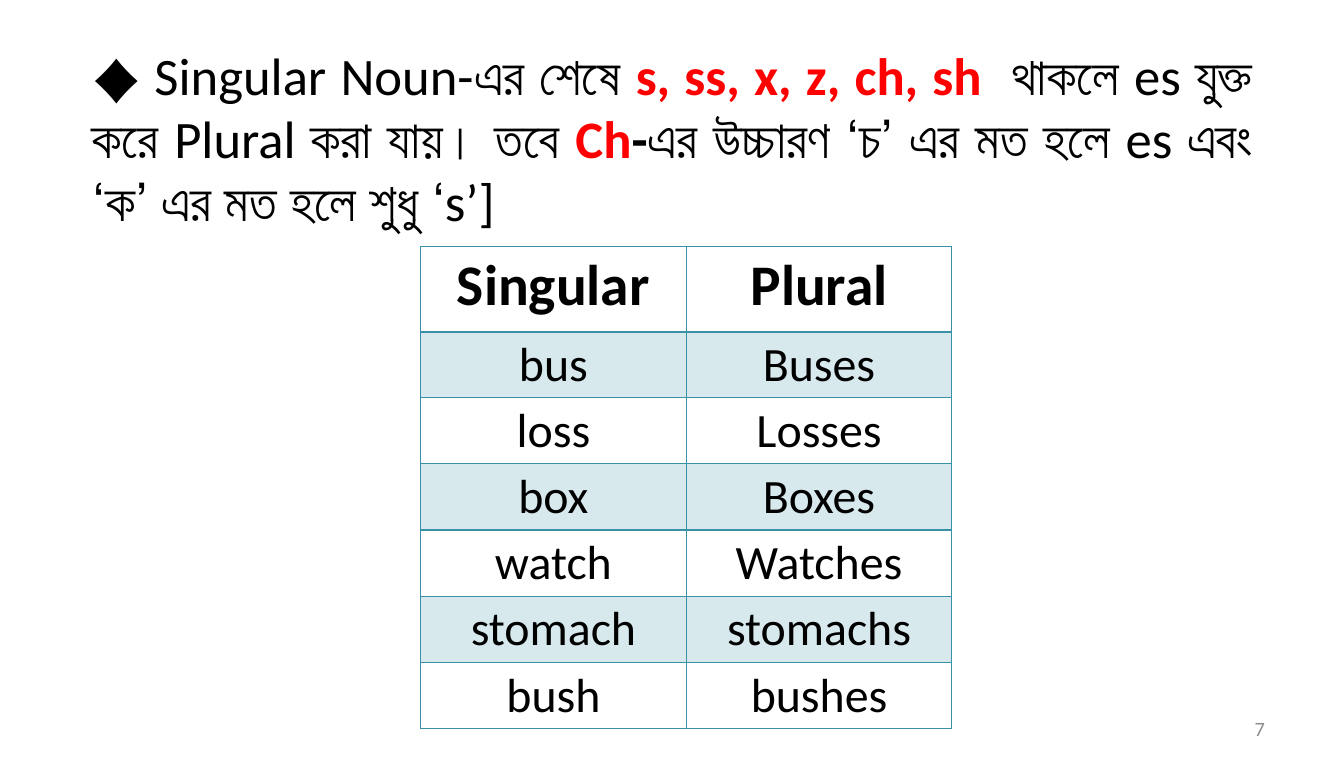
import pptx
import pptx.dml.color
import pptx.enum.text
import pptx.oxml
import pptx.oxml.ns
import pptx.util
from pptx.util import Cm

ALIGN = pptx.enum.text.PP_ALIGN
ANCHOR = pptx.enum.text.MSO_ANCHOR
BLACK, RED, TEAL, GREY = "000000", "FF0000", "3891A7", "8C8C8C"

RULE_RUNS = [
    ("♦ ", dict(size=41)),
    ("Singular Noun-এর শেষে ", {}),
    ("s, ss, x, z, ch, sh  ", dict(color=RED, bold=True)),
    ("থাকলে es যুক্ত করে Plural করা যায়। তবে ", {}),
    ("Ch", dict(color=RED, bold=True)),
    ("-", dict(bold=True)),
    ("এর উচ্চারণ ‘চ’ এর মত হলে es এবং ‘ক’ এর মত হলে শুধু ‘s’]", {}),
]
NOUNS = [
    ("Singular", "Plural"),
    ("bus", "Buses"),
    ("loss", "Losses"),
    ("box", "Boxes"),
    ("watch", "Watches"),
    ("stomach", "stomachs"),
    ("bush", "bushes"),
]


def rgb(value):
    return pptx.dml.color.RGBColor.from_string(value)


def add_run(paragraph, text, size, color=BLACK, bold=False):
    run = paragraph.add_run()
    run.text = text
    run.font.color.rgb = rgb(color)
    formats = {"name": "Calibri", "size": pptx.util.Pt(size), "bold": bold}
    for name, value in formats.items():
        setattr(run.font, name, value)


def add_text(slide, box, runs, alignment, frame_formats):
    frame = slide.shapes.add_textbox(*box).text_frame
    for name, value in {"word_wrap": True, **frame_formats}.items():
        setattr(frame, name, value)
    paragraph = frame.paragraphs[0]
    paragraph.alignment = alignment
    for text, formats in runs:
        add_run(paragraph, text, **{"size": 44, **formats})


def add_border(cell, side, width):
    namespace = pptx.oxml.ns.nsdecls("a")
    cell._tc.get_or_add_tcPr().append(pptx.oxml.parse_xml(
        f'<a:ln{side} {namespace} w="{pptx.util.Pt(width)}"><a:solidFill>'
        f'<a:srgbClr val="{TEAL}"/></a:solidFill></a:ln{side}>'))


def fill_band(cell):
    cell.fill.solid()
    cell.fill.fore_color.rgb = rgb(TEAL)
    color = cell._tc.tcPr.find(".//" + pptx.oxml.ns.qn("a:solidFill") + "[last()]")
    color = cell._tc.tcPr.findall(pptx.oxml.ns.qn("a:solidFill"))[0][0]
    color.append(pptx.oxml.parse_xml(
        f'<a:alpha {pptx.oxml.ns.nsdecls("a")} val="20000"/>'))


def add_noun_table(slide, left, top, width, height):
    header_height = Cm(2.52)
    row_height = (height - header_height) // (len(NOUNS) - 1)
    table = slide.shapes.add_table(
        len(NOUNS), 2, left, top, width, height).table
    for row_index, words in enumerate(NOUNS):
        is_header = row_index == 0
        table.rows[row_index].height = header_height if is_header else row_height
        for column_index, word in enumerate(words):
            cell = table.cell(row_index, column_index)
            # Heavier line between the header and the words
            add_border(cell, "L", 1)
            add_border(cell, "R", 1)
            add_border(cell, "T", 2 if row_index == 1 else 1)
            add_border(cell, "B", 2 if is_header else 1)
            if row_index % 2:
                fill_band(cell)
            else:
                cell.fill.background()
            paragraph = cell.text_frame.paragraphs[0]
            paragraph.alignment = ALIGN.CENTER
            add_run(paragraph, word, 48 if is_header else 40, bold=is_header)


def build_slide(presentation):
    slide = presentation.slides.add_slide(presentation.slide_layouts[6])
    # Spelling rule
    add_text(slide, (Cm(2.46), Cm(1.14), Cm(34.72), Cm(5.89)),
             RULE_RUNS, ALIGN.JUSTIFY, {})
    # Examples
    add_noun_table(slide, Cm(12.4), Cm(7.26), Cm(15.66), Cm(14.22))
    # Slide number
    add_text(slide, (Cm(28.4), Cm(20.9), Cm(9.25), Cm(1.19)),
             [("7", dict(size=17, color=GREY))], ALIGN.RIGHT,
             {"vertical_anchor": ANCHOR.MIDDLE,
              "margin_left": Cm(0.36), "margin_right": Cm(0.36),
              "margin_top": Cm(0.18), "margin_bottom": Cm(0.18)})


def main():
    presentation = pptx.Presentation()
    presentation.slide_width = Cm(39.62)
    presentation.slide_height = Cm(22.56)
    build_slide(presentation)
    presentation.save("out.pptx")


if __name__ == "__main__":
    main()
